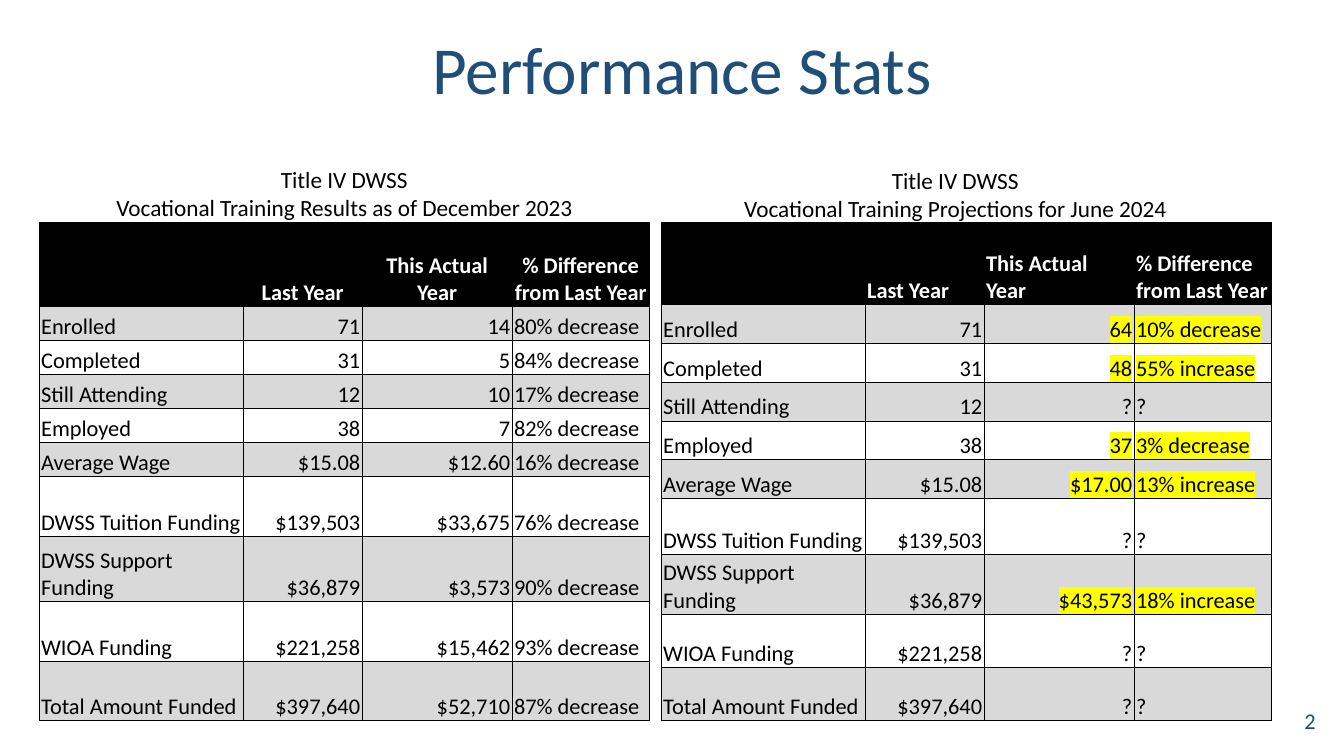
import lxml.etree
import pptx
import pptx.dml.color
import pptx.enum.text
import pptx.oxml
import pptx.oxml.ns
import pptx.util

Pt = pptx.util.Pt
ALIGN = pptx.enum.text.PP_ALIGN
ANCHOR = pptx.enum.text.MSO_ANCHOR
LEFT, CENTER, RIGHT = ALIGN.LEFT, ALIGN.CENTER, ALIGN.RIGHT

NAVY, BLACK, WHITE = "1F4E79", "000000", "FFFFFF"
BAND, YELLOW = "D9D9D9", "FFFF00"


def color(hex_string):
    return pptx.dml.color.RGBColor.from_string(hex_string)


class StatsSlide:
    """Holds the style and the current slide."""

    font_name = "Calibri"
    body_size = 16
    cell_inset = 1.4
    border_width = 0.5

    def __init__(self, presentation):
        self.slide = presentation.slides.add_slide(presentation.slide_layouts[5])

    def style(self, frame, size, ink, align, bold=False):
        for paragraph in frame.paragraphs:
            paragraph.alignment = align
            for run in paragraph.runs:
                run.font.name = self.font_name
                run.font.size = Pt(size)
                run.font.bold = bold
                run.font.color.rgb = color(ink)

    def title(self, wording, left, top, width, height):
        heading = self.slide.shapes.title
        heading.left, heading.top = Pt(left), Pt(top)
        heading.width, heading.height = Pt(width), Pt(height)
        frame = heading.text_frame
        frame.text = wording
        frame.vertical_anchor = ANCHOR.MIDDLE
        frame.paragraphs[0].line_spacing = 0.9
        self.style(frame, 48, NAVY, CENTER)

    def text(self, wording, left, top, width, height, size, ink, align):
        frame = self.slide.shapes.add_textbox(
            Pt(left), Pt(top), Pt(width), Pt(height)).text_frame
        frame.word_wrap = True
        frame.vertical_anchor = ANCHOR.MIDDLE
        frame.text = wording
        self.style(frame, size, ink, align)

    def border(self, cell):
        properties = cell._tc.get_or_add_tcPr()
        for position, side in enumerate(("lnL", "lnR", "lnT", "lnB")):
            line = pptx.oxml.parse_xml(
                f'<a:{side} {pptx.oxml.ns.nsdecls("a")} w="{Pt(self.border_width)}">'
                f'<a:solidFill><a:srgbClr val="{BLACK}"/></a:solidFill></a:{side}>')
            properties.insert(position, line)

    def highlight(self, run):
        qn = pptx.oxml.ns.qn
        marker = lxml.etree.Element(qn("a:highlight"))
        lxml.etree.SubElement(marker, qn("a:srgbClr")).set("val", YELLOW)
        run.font._element.find(qn("a:solidFill")).addnext(marker)

    def cell(self, cell, wording, fill, ink, align, bold, marked):
        cell.text = wording
        cell.vertical_anchor = ANCHOR.BOTTOM
        cell.margin_left = cell.margin_right = cell.margin_top = Pt(self.cell_inset)
        cell.margin_bottom = 0
        cell.fill.solid()
        cell.fill.fore_color.rgb = color(fill)
        self.border(cell)
        self.style(cell.text_frame, self.body_size, ink, align, bold)
        if marked:
            self.highlight(cell.text_frame.paragraphs[0].runs[0])

    def table(self, rows, left, top, widths, heights, header_align, mark_known):
        grid = self.slide.shapes.add_table(
            len(rows), len(widths), Pt(left), Pt(top),
            Pt(sum(widths)), Pt(sum(heights))).table
        for column, width in zip(grid.columns, widths):
            column.width = Pt(width)
        for r, (row, height) in enumerate(zip(rows, heights)):
            grid.rows[r].height = Pt(height)
            header = r == 0
            fill = BLACK if header else BAND if r % 2 else WHITE
            for c, wording in enumerate(row):
                align = header_align if header else RIGHT if c in (1, 2) else LEFT
                marked = mark_known and not header and c >= 2 and wording != "?"
                self.cell(grid.cell(r, c), wording, fill,
                          WHITE if header else BLACK, align, header, marked)


# Content: measures shared by both tables, then this year's figures
HEADER = ("", "Last Year", "This Actual Year", "% Difference from Last Year")
LAST_YEAR = [
    ("Enrolled", "71"),
    ("Completed", "31"),
    ("Still Attending", "12"),
    ("Employed", "38"),
    ("Average Wage", "$15.08"),
    ("DWSS Tuition Funding", "$139,503"),
    ("DWSS Support Funding", "$36,879"),
    ("WIOA Funding", "$221,258"),
    ("Total Amount Funded", "$397,640"),
]
RESULTS = [
    ("14", "80% decrease"),
    ("5", "84% decrease"),
    ("10", "17% decrease"),
    ("7", "82% decrease"),
    ("$12.60", "16% decrease"),
    ("$33,675", "76% decrease"),
    ("$3,573", "90% decrease"),
    ("$15,462", "93% decrease"),
    ("$52,710", "87% decrease"),
]
UNKNOWN = ("?", "?")
PROJECTIONS = [
    ("64", "10% decrease"),
    ("48", "55% increase"),
    UNKNOWN,
    ("37", "3% decrease"),
    ("$17.00", "13% increase"),
    UNKNOWN,
    ("$43,573", "18% increase"),
    UNKNOWN,
    UNKNOWN,
]
COLUMN_WIDTHS = [145.7, 85, 107.2, 98]
RESULT_HEIGHTS = [60.4] + [24.3] * 5 + [42.5, 46.9, 42.5, 42.5]
PROJECTION_HEIGHTS = [59] + [27.7] * 5 + [40, 42.7, 38, 38]

# Each panel: caption, caption left and top, table left, figures, heights,
# header alignment, whether known figures are highlighted
PANELS = [
    ("Vocational Training Results as of December 2023", 28, 118, 28,
     RESULTS, RESULT_HEIGHTS, CENTER, False),
    ("Vocational Training Projections for June 2024", 464.4, 118.5, 472.3,
     PROJECTIONS, PROJECTION_HEIGHTS, LEFT, True),
]


def main():
    presentation = pptx.Presentation()
    presentation.slide_width, presentation.slide_height = Pt(960), Pt(540)
    stats = StatsSlide(presentation)

    # Title and page number
    stats.title("Performance Stats", 28, 0, 918.7, 104.4)
    stats.text("2", 730.8, 500.4, 216, 28.8, 16, NAVY, RIGHT)

    # Captioned tables
    for (caption, caption_left, caption_top, table_left,
         figures, heights, header_align, mark_known) in PANELS:
        rows = [HEADER] + [past + now for past, now in zip(LAST_YEAR, figures)]
        stats.table(rows, table_left, 158.6, COLUMN_WIDTHS, heights,
                    header_align, mark_known)
        stats.text(f"Title IV DWSS\n{caption}", caption_left, caption_top,
                   435.6, 40.5, 16.6, BLACK, CENTER)

    presentation.save("out.pptx")


if __name__ == "__main__":
    main()
